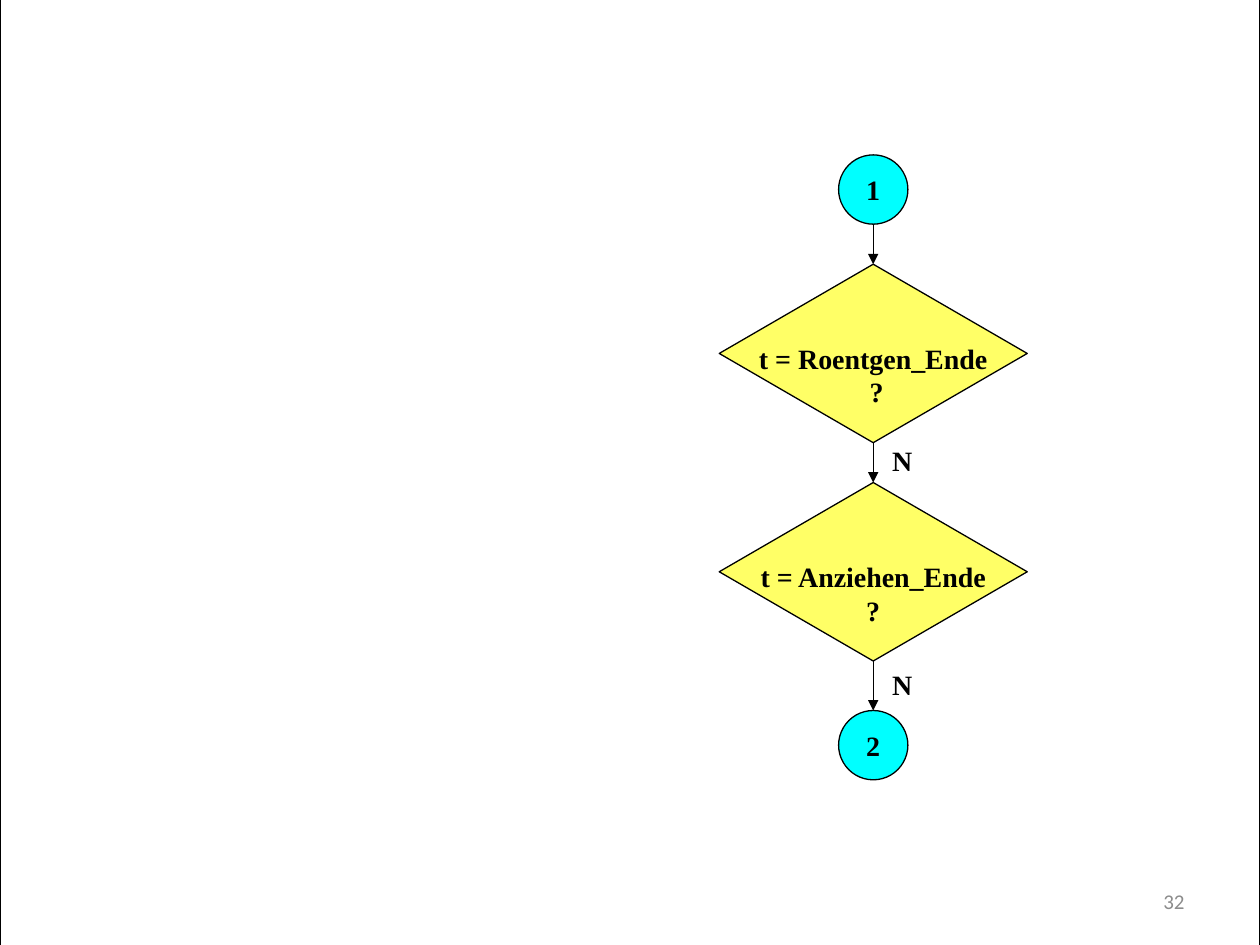
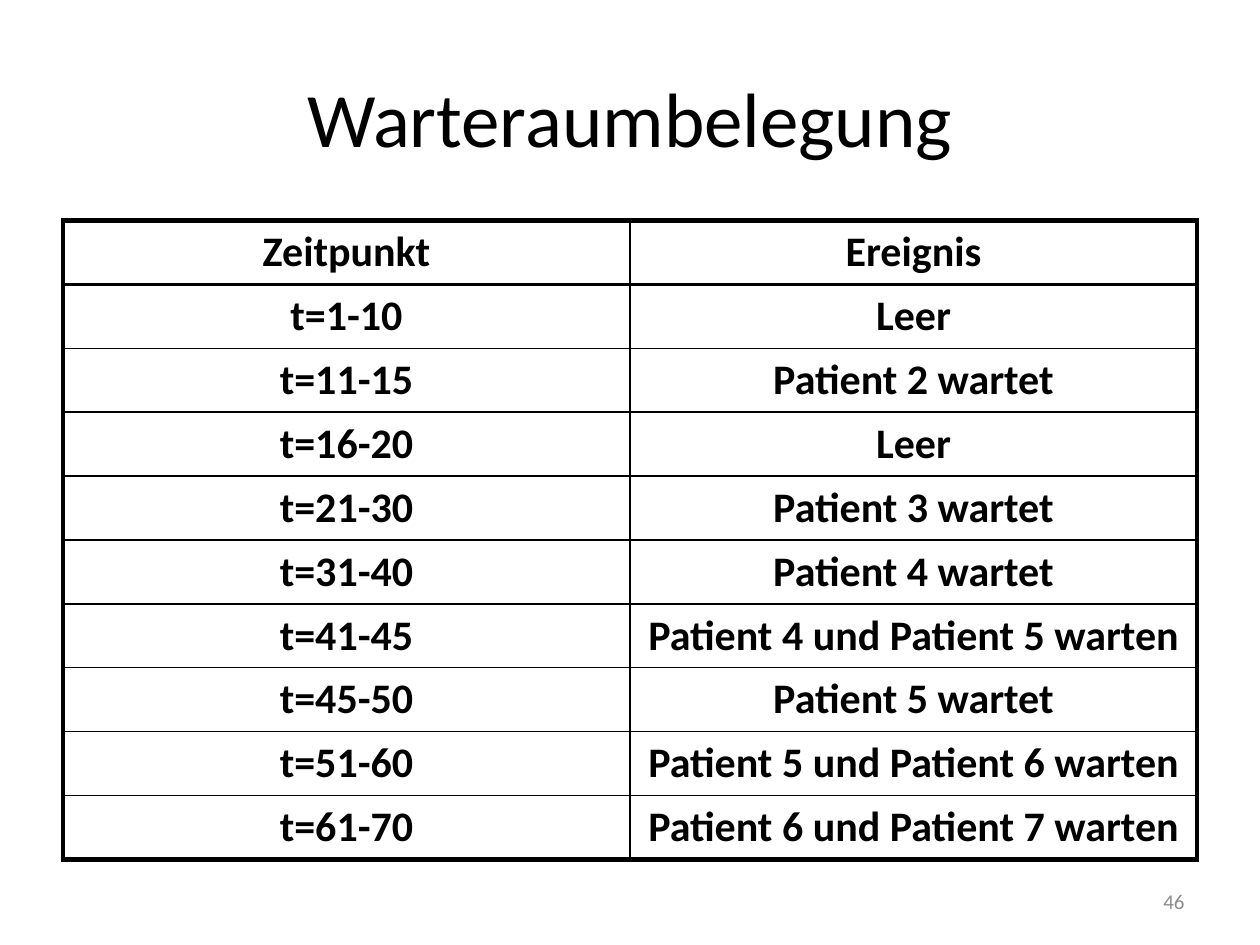
from lxml.etree import SubElement
from pptx import Presentation
from pptx.dml.color import RGBColor
from pptx.enum.shapes import MSO_CONNECTOR as Connector, MSO_SHAPE as Shape
from pptx.enum.text import MSO_ANCHOR as Anchor, PP_ALIGN as Align
from pptx.oxml.ns import qn
from pptx.util import Pt

BLACK, WHITE, GREY = "000000", "FFFFFF", "8C8C8C"
YELLOW, CYAN = "FFFF66", "00FFFF"
BODY_FONT, CHART_FONT = "Calibri", "Times New Roman"
TITLE_ONLY, BLANK = 5, 6
TOP, BOTTOM = 0, 2
SLIDE_WIDTH, SLIDE_HEIGHT = 720, 540
AXIS = 499
DECISION_WIDTH, DECISION_HEIGHT = 176, 102
CIRCLE_SIZE = 39.6
OCCUPANCY = [
    ("Zeitpunkt", "Ereignis"),
    ("t=1-10", "Leer"),
    ("t=11-15", "Patient 2 wartet"),
    ("t=16-20", "Leer"),
    ("t=21-30", "Patient 3 wartet"),
    ("t=31-40", "Patient 4 wartet"),
    ("t=41-45", "Patient 4 und Patient 5 warten"),
    ("t=45-50", "Patient 5 wartet"),
    ("t=51-60", "Patient 5 und Patient 6 warten"),
    ("t=61-70", "Patient 6 und Patient 7 warten"),
]


def color(value):
    """Turn a hex string into a colour."""
    return RGBColor.from_string(value)


def write(frame, text, size=16, font=CHART_FONT, ink=BLACK, bold=True,
          align=Align.CENTER, anchor=Anchor.TOP):
    """Fill a text frame with one paragraph per line of text."""
    frame.vertical_anchor = anchor
    for index, line in enumerate(text.split("\n")):
        paragraph = frame.add_paragraph() if index else frame.paragraphs[0]
        paragraph.alignment = align
        run = paragraph.add_run()
        run.text = line
        run.font.size, run.font.name, run.font.bold = Pt(size), font, bold
        run.font.color.rgb = color(ink)


def add_label(slide, text, left, top, width, height, **text_format):
    """Add a wrapping text box."""
    box = slide.shapes.add_textbox(Pt(left), Pt(top), Pt(width), Pt(height))
    box.text_frame.word_wrap = True
    write(box.text_frame, text, **text_format)


def add_page_number(slide, number):
    """Add the page number at the bottom right."""
    add_label(slide, str(number), 516, 500.5, 168, 28.75, size=12, font=BODY_FONT,
              ink=GREY, bold=False, align=Align.RIGHT, anchor=Anchor.MIDDLE)


def add_outlined(slide, kind, left, top, width, height, fill=None):
    """Add a preset shape with a thin black outline."""
    shape = slide.shapes.add_shape(kind, Pt(left), Pt(top), Pt(width), Pt(height))
    shape.shadow.inherit = False
    shape.line.color.rgb, shape.line.width = color(BLACK), Pt(0.75)
    if fill:
        shape.fill.solid()
        shape.fill.fore_color.rgb = color(fill)
    else:
        shape.fill.background()
    return shape


def add_decision(slide, question, top):
    """Add a decision diamond centred on the flow axis."""
    shape = add_outlined(slide, Shape.FLOWCHART_DECISION, AXIS - DECISION_WIDTH / 2, top,
                         DECISION_WIDTH, DECISION_HEIGHT, YELLOW)
    frame = shape.text_frame
    frame.word_wrap = False
    frame.margin_left = frame.margin_right = frame.margin_bottom = 0
    frame.margin_top = Pt(18.5)
    write(frame, question)
    return shape


def add_circle(slide, number, top):
    """Add a numbered junction circle centred on the flow axis."""
    shape = add_outlined(slide, Shape.OVAL, AXIS - CIRCLE_SIZE / 2, top,
                         CIRCLE_SIZE, CIRCLE_SIZE, CYAN)
    write(shape.text_frame, number, anchor=Anchor.MIDDLE)
    return shape


def add_arrow(slide, upper, lower):
    """Add an arrow down the flow axis between two shapes."""
    middle = Pt(AXIS)
    arrow = slide.shapes.add_connector(Connector.STRAIGHT, middle, upper.top + upper.height,
                                       middle, lower.top)
    if upper.auto_shape_type == Shape.FLOWCHART_DECISION:
        arrow.begin_connect(upper, BOTTOM)
    arrow.end_connect(lower, TOP)
    arrow.line.color.rgb, arrow.line.width = color(BLACK), Pt(0.75)
    SubElement(arrow.line._get_or_add_ln(), qn("a:tailEnd"), type="triangle")
    SubElement(arrow._element.spPr, qn("a:effectLst"))


def set_borders(cell, **widths):
    """Draw black cell borders with the given widths in points."""
    properties = cell._tc.get_or_add_tcPr()
    for side, width in widths.items():
        line = SubElement(properties, qn(f"a:ln{side}"), w=str(Pt(width)))
        SubElement(SubElement(line, qn("a:solidFill")), qn("a:srgbClr"), val=BLACK)


def add_occupancy_table(slide, rows):
    """Add the table with a thick frame and a ruled header."""
    count, columns = len(rows), len(rows[0])
    table = slide.shapes.add_table(count, columns, Pt(36), Pt(126), Pt(648),
                                   Pt(36.5 * count)).table
    table.first_row = table.horz_banding = False
    for row, texts in enumerate(rows):
        for column, text in enumerate(texts):
            cell = table.cell(row, column)
            set_borders(cell, L=1 if column else 3,
                        R=3 if column == columns - 1 else 1,
                        T={0: 3, 1: 2}.get(row, 1),
                        B={0: 2, count - 1: 3}.get(row, 1))
            cell.fill.background()
            write(cell.text_frame, text, size=24, font=BODY_FONT)


def build_flow_slide(presentation):
    """Build the flow chart slide."""
    slide = presentation.slides.add_slide(presentation.slide_layouts[BLANK])
    add_outlined(slide, Shape.RECTANGLE, 0, -0.75, SLIDE_WIDTH, SLIDE_HEIGHT + 1.5)
    steps = [
        add_circle(slide, "1", 88.5),
        add_decision(slide, "t = Roentgen_Ende\n ?", 151),
        add_decision(slide, "t = Anziehen_Ende\n?", 275.75),
        add_circle(slide, "2", 406),
    ]
    for upper, lower in zip(steps, steps[1:]):
        add_arrow(slide, upper, lower)
    for top in (249.75, 378):
        add_label(slide, "N", 497.5, top, 36, 28)
    add_page_number(slide, 32)


def build_table_slide(presentation):
    """Build the waiting room slide."""
    slide = presentation.slides.add_slide(presentation.slide_layouts[TITLE_ONLY])
    title = slide.shapes.title
    title.left, title.top, title.width, title.height = Pt(36), Pt(21.6), Pt(648), Pt(90)
    write(title.text_frame, "Warteraumbelegung", size=44, font=BODY_FONT, bold=False,
          anchor=Anchor.MIDDLE)
    add_occupancy_table(slide, OCCUPANCY)
    add_page_number(slide, 46)


def main():
    """Build and save the presentation."""
    presentation = Presentation()
    presentation.slide_width, presentation.slide_height = Pt(SLIDE_WIDTH), Pt(SLIDE_HEIGHT)
    build_flow_slide(presentation)
    build_table_slide(presentation)
    presentation.save("out.pptx")


if __name__ == "__main__":
    main()
